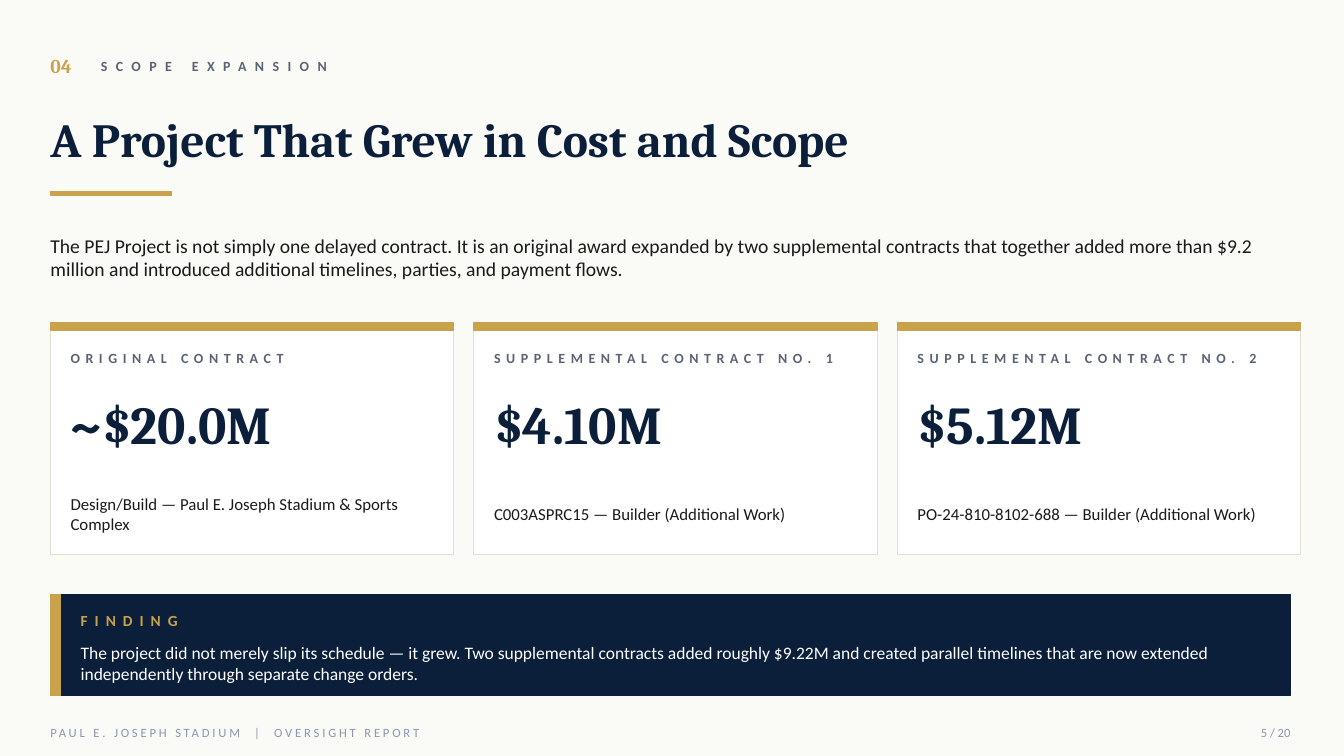
from dataclasses import dataclass

from pptx import Presentation
from pptx.dml.color import RGBColor
from pptx.enum.shapes import MSO_SHAPE as Shape
from pptx.enum.text import MSO_ANCHOR as Anchor, MSO_AUTO_SIZE as AutoSize, PP_ALIGN as Align
from pptx.shapes.autoshape import Shape as AutoShape
from pptx.slide import Slide
from pptx.util import Emu, Pt

EMU_PER_PX = 9144  # 100 px to the inch
SLIDE_W, SLIDE_H = 1333, 750
MARGIN = 50
CONTENT_W = 1230

COLORS = {
    "paper": "FAFAF7",
    "navy": "0B1F3A",
    "gold": "C9A24B",
    "slate": "5A6273",
    "ink": "1A1A1A",
    "white": "FFFFFF",
    "border": "E3DFD1",
    "footer": "8A97B0",
}

FRAME_FORMAT = {
    "margin_left": 0,
    "margin_top": 0,
    "margin_right": 0,
    "margin_bottom": 0,
    "word_wrap": True,
    "auto_size": AutoSize.NONE,
    "vertical_anchor": Anchor.MIDDLE,
}


@dataclass(frozen=True)
class Box:
    left: int
    top: int
    width: int
    height: int

    def emu(self) -> list[Emu]:
        return [Emu(px * EMU_PER_PX)
                for px in (self.left, self.top, self.width, self.height)]


@dataclass(frozen=True)
class Style:
    size: float
    color: str
    font: str = "Calibri"
    bold: bool = False
    spacing: int = 0
    align: Align = Align.LEFT


@dataclass(frozen=True)
class Contract:
    label: str
    amount: str
    detail: str


SECTION_NUMBER = Style(14, "gold", "Cambria", bold=True)
SECTION_NAME = Style(10, "slate", bold=True, spacing=6)
HEADLINE = Style(34, "navy", "Cambria", bold=True)
INTRO = Style(14, "ink")
CARD_LABEL = Style(10, "slate", bold=True, spacing=4)
CARD_AMOUNT = Style(38, "navy", "Cambria", bold=True)
CARD_DETAIL = Style(12, "ink")
FINDING_LABEL = Style(11, "gold", bold=True, spacing=5)
FINDING_TEXT = Style(12.5, "white")
FOOTER = Style(9, "footer", spacing=2)
PAGE_NUMBER = Style(9, "footer", align=Align.RIGHT)

CARD_W, CARD_H, CARD_GAP, CARD_TOP, CARD_PAD = 400, 230, 20, 320, 20

CONTRACTS = [
    Contract("ORIGINAL CONTRACT", "~$20.0M",
             "Design/Build — Paul E. Joseph Stadium & Sports Complex"),
    Contract("SUPPLEMENTAL CONTRACT NO. 1", "$4.10M",
             "C003ASPRC15 — Builder (Additional Work)"),
    Contract("SUPPLEMENTAL CONTRACT NO. 2", "$5.12M",
             "PO-24-810-8102-688 — Builder (Additional Work)"),
]


def rgb(name: str) -> RGBColor:
    return RGBColor.from_string(COLORS[name])


def write_text(holder: AutoShape, text: str, style: Style) -> None:
    frame = holder.text_frame
    for name, value in FRAME_FORMAT.items():
        setattr(frame, name, value)
    paragraph = frame.paragraphs[0]
    paragraph.alignment = style.align
    run = paragraph.add_run()
    run.text = text
    font_format = {"name": style.font, "size": Pt(style.size), "bold": style.bold}
    for name, value in font_format.items():
        setattr(run.font, name, value)
    run.font.color.rgb = rgb(style.color)
    if style.spacing:
        run._r.get_or_add_rPr().set("spc", str(style.spacing * 100))


def add_text(slide: Slide, box: Box, text: str, style: Style) -> None:
    write_text(slide.shapes.add_textbox(*box.emu()), text, style)


def add_block(slide: Slide, box: Box, fill: str, line: str = "",
              line_width: float = 1) -> None:
    block = slide.shapes.add_shape(Shape.RECTANGLE, *box.emu())
    block.shadow.inherit = False
    block.fill.solid()
    block.fill.fore_color.rgb = rgb(fill)
    block.line.color.rgb = rgb(line or fill)
    block.line.width = Pt(line_width)


def add_title(slide: Slide, box: Box, text: str, style: Style) -> None:
    title = slide.shapes.title
    title.left, title.top, title.width, title.height = box.emu()
    write_text(title, text, style)


def add_card(slide: Slide, left: int, contract: Contract) -> None:
    add_block(slide, Box(left, CARD_TOP, CARD_W, CARD_H), "white", "border", 0.75)
    add_block(slide, Box(left, CARD_TOP, CARD_W, 8), "gold")
    text_left, text_w = left + CARD_PAD, CARD_W - 2 * CARD_PAD
    rows = [
        (15, 40, contract.label, CARD_LABEL),
        (60, 80, contract.amount, CARD_AMOUNT),
        (155, 70, contract.detail, CARD_DETAIL),
    ]
    for offset, height, text, style in rows:
        add_text(slide, Box(text_left, CARD_TOP + offset, text_w, height), text, style)


def main() -> None:
    prs = Presentation()
    prs.slide_width = Emu(SLIDE_W * EMU_PER_PX)
    prs.slide_height = Emu(SLIDE_H * EMU_PER_PX)
    slide = prs.slides.add_slide(prs.slide_layouts.get_by_name("Title Only"))
    slide.background.fill.solid()
    slide.background.fill.fore_color.rgb = rgb("paper")

    # Heading
    add_text(slide, Box(MARGIN, 45, 60, 40), "04", SECTION_NUMBER)
    add_text(slide, Box(100, 50, 600, 30), "SCOPE EXPANSION", SECTION_NAME)
    add_title(slide, Box(MARGIN, 95, 1200, 85),
              "A Project That Grew in Cost and Scope", HEADLINE)
    add_block(slide, Box(MARGIN, 190, 120, 4), "gold")
    add_text(slide, Box(MARGIN, 210, CONTENT_W, 90),
             "The PEJ Project is not simply one delayed contract. It is an original "
             "award expanded by two supplemental contracts that together added more "
             "than $9.2 million and introduced additional timelines, parties, and "
             "payment flows.", INTRO)

    # Contract cards
    for index, contract in enumerate(CONTRACTS):
        add_card(slide, MARGIN + index * (CARD_W + CARD_GAP), contract)

    # Finding
    add_block(slide, Box(MARGIN, 590, CONTENT_W, 100), "navy")
    add_block(slide, Box(MARGIN, 590, 10, 100), "gold")
    add_text(slide, Box(80, 600, 300, 30), "FINDING", FINDING_LABEL)
    add_text(slide, Box(80, 630, 1220, 55),
             "The project did not merely slip its schedule — it grew. Two supplemental "
             "contracts added roughly $9.22M and created parallel timelines that are "
             "now extended independently through separate change orders.", FINDING_TEXT)

    # Footer
    add_text(slide, Box(MARGIN, 712, 800, 30),
             "PAUL E. JOSEPH STADIUM  |  OVERSIGHT REPORT", FOOTER)
    add_text(slide, Box(1180, 712, 100, 30), "5 / 20", PAGE_NUMBER)

    prs.save("out.pptx")


if __name__ == "__main__":
    main()
